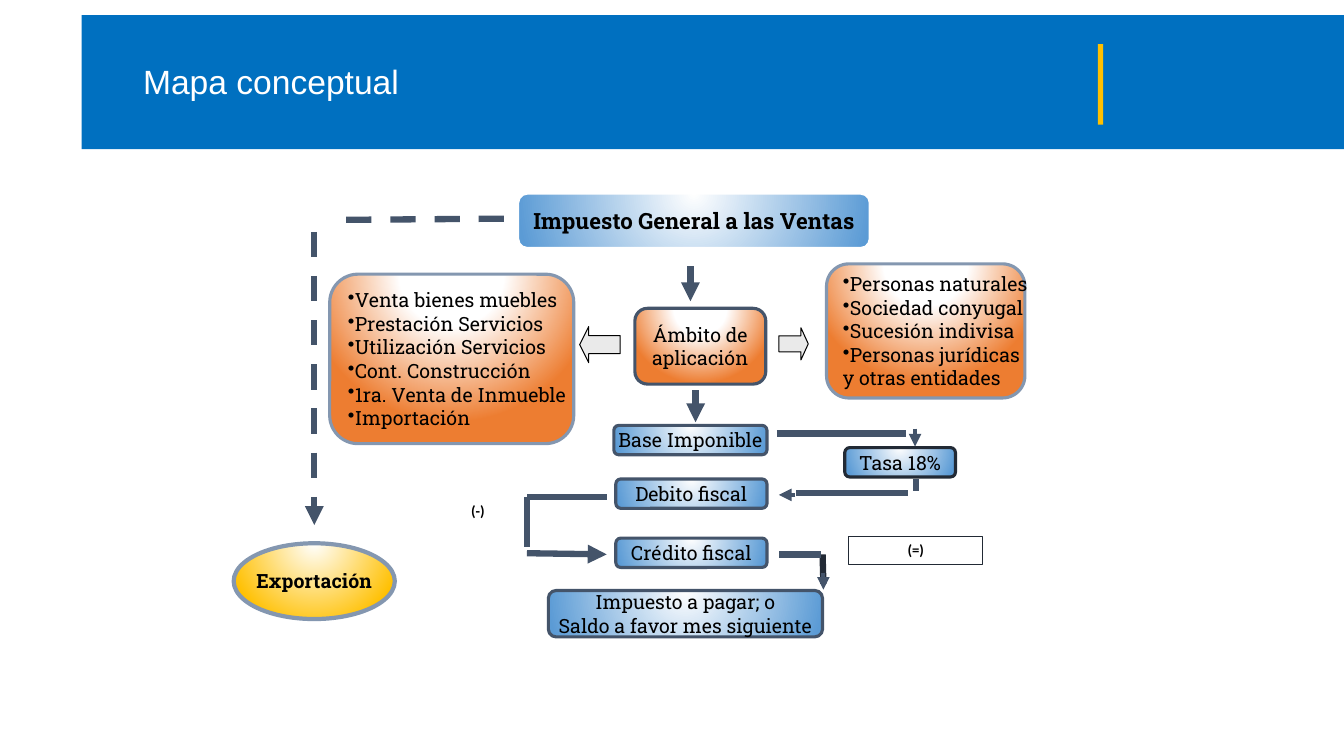
from lxml.etree import SubElement
from pptx import Presentation
from pptx.dml.color import RGBColor
from pptx.enum.dml import MSO_LINE
from pptx.enum.shapes import MSO_CONNECTOR, MSO_SHAPE
from pptx.enum.text import MSO_ANCHOR, MSO_AUTO_SIZE, PP_ALIGN
from pptx.oxml import parse_xml
from pptx.oxml.ns import nsdecls, qn
from pptx.util import Cm, Pt

COLORS = {
    "banner": "0070C0", "gold": "FFC000", "blue": "5B9BD5", "orange": "ED7D31",
    "slate": "44546A", "steel": "8497B0", "navy": "222A35",
    "gray": "EAEAEA", "white": "FFFFFF", "black": "000000",
}
BULLET = "•"


def color(name):
    return RGBColor.from_string(COLORS[name])


def write(frame, lines, font_name, size, font_color="black", bold=False, align=PP_ALIGN.CENTER):
    for index, line in enumerate(lines):
        paragraph = frame.paragraphs[0] if index == 0 else frame.add_paragraph()
        paragraph.alignment = align
        if line.startswith(BULLET):
            properties = paragraph._p.get_or_add_pPr()
            SubElement(properties, qn("a:buChar")).set("char", BULLET)
        run = paragraph.add_run()
        run.text = line.removeprefix(BULLET)
        run.font.name = font_name
        run.font.size = Pt(size)
        run.font.bold = bold
        run.font.color.rgb = color(font_color)


presentation = Presentation()
presentation.slide_width = Cm(33.87)
presentation.slide_height = Cm(19.05)
slide = presentation.slides.add_slide(presentation.slide_layouts[5])
shapes = slide.shapes

plain_shapes = [
    (MSO_SHAPE.RECTANGLE, (2.06, 0.38, 31.81, 3.38), "banner", None, 0),
    (MSO_SHAPE.RECTANGLE, (26.72, 2.06, 2.03, 0.13), "gold", None, 270),
    (MSO_SHAPE.LEFT_ARROW, (14.61, 8.23, 1.02, 0.91), "gray", "black", 0),
    (MSO_SHAPE.RIGHT_ARROW, (19.63, 8.26, 0.74, 0.81), "gray", "black", 0),
]
for kind, box, fill, outline, rotation in plain_shapes:
    shape = shapes.add_shape(kind, *map(Cm, box))
    shape.shadow.inherit = False
    shape.rotation = rotation
    shape.fill.solid()
    shape.fill.fore_color.rgb = color(fill)
    if outline:
        shape.adjustments[1] = 0.25
        shape.line.color.rgb = color(outline)
        shape.line.width = Pt(0.75)
    else:
        shape.line.fill.background()

title = shapes.title
title.left, title.top, title.width, title.height = map(Cm, (3.35, 0.91, 15.49, 2.41))
title.text_frame.auto_size = MSO_AUTO_SIZE.NONE
title.text_frame.vertical_anchor = MSO_ANCHOR.MIDDLE
write(title.text_frame, ["Mapa conceptual"], "Arial", 24, "white", align=PP_ALIGN.LEFT)
title.text_frame.paragraphs[0].line_spacing = 0.9
shape.element.addnext(title.element)

ROUNDED, OVAL = MSO_SHAPE.ROUNDED_RECTANGLE, MSO_SHAPE.OVAL
nodes = [
    (ROUNDED, (13.06, 4.88, 8.86, 1.37), "blue", "white", 1.5, ["Impuesto General a las Ventas"]),
    (ROUNDED, (16, 7.77, 3.3, 1.91), "orange", "slate", 2.25, ["Ámbito de", "aplicación"]),
    (ROUNDED, (13.82, 14.88, 6.91, 1.17), "blue", "slate", 2.25,
     ["Impuesto a pagar; o", "Saldo a favor mes siguiente"]),
    (ROUNDED, (15.52, 13.56, 3.81, 0.74), "blue", "slate", 2.25, ["Crédito fiscal"]),
    (ROUNDED, (8.31, 6.91, 6.15, 4.27), "orange", "steel", 2.25,
     ["•Venta bienes muebles", "•Prestación Servicios", "•Utilización Servicios",
      "•Cont. Construcción", "•1ra. Venta de Inmueble", "•Importación"]),
    (ROUNDED, (15.47, 10.72, 3.86, 0.74), "blue", "slate", 2.25, ["Base Imponible"]),
    (ROUNDED, (20.83, 6.65, 5, 3.38), "orange", "steel", 2.25,
     ["•Personas naturales", "•Sociedad conyugal", "•Sucesión indivisa",
      "•Personas jurídicas", "y otras entidades"]),
    (ROUNDED, (21.29, 11.28, 2.79, 0.74), "blue", "navy", 2.25, ["Tasa 18%"]),
    (ROUNDED, (15.52, 12.07, 3.81, 0.74), "blue", "slate", 2.25, ["Debito fiscal"]),
    (OVAL, (5.89, 13.69, 4.06, 1.91), "gold", "steel", 3, ["Exportación"]),
]
for kind, box, fill, outline, width, lines in nodes:
    shape = shapes.add_shape(kind, *map(Cm, box))
    shape.shadow.inherit = False
    shape.fill.background()
    white_until = 35000 if fill == "orange" else 0
    gradient = parse_xml(
        f'<a:gradFill {nsdecls("a")} rotWithShape="1"><a:gsLst>'
        f'<a:gs pos="0"><a:srgbClr val="{COLORS["white"]}"/></a:gs>'
        f'<a:gs pos="{white_until}"><a:srgbClr val="{COLORS["white"]}"/></a:gs>'
        f'<a:gs pos="100000"><a:srgbClr val="{COLORS[fill]}"/></a:gs></a:gsLst>'
        '<a:path path="circle"><a:fillToRect l="50000" t="-80000" r="50000" b="180000"/></a:path>'
        '</a:gradFill>')
    properties = shape.element.spPr
    properties.replace(properties.find(qn("a:noFill")), gradient)
    shape.line.color.rgb = color(outline)
    shape.line.width = Pt(width)
    frame = shape.text_frame
    frame.word_wrap = False
    frame.vertical_anchor = MSO_ANCHOR.MIDDLE
    if kind == OVAL:
        frame.margin_left = frame.margin_right = Cm(0.18)
        frame.margin_top = frame.margin_bottom = Cm(0.1)
    is_heading = outline == "white"
    align = PP_ALIGN.LEFT if lines[0].startswith(BULLET) else PP_ALIGN.CENTER
    write(frame, lines, "Roboto Slab", 16 if is_heading else 14,
          bold=is_heading or kind == OVAL, align=align)

links = [
    ((19.58, 10.92, 22.83, 10.92), "slate", 4.5, False, False),
    ((23.06, 10.8, 23.06, 11.25), "slate", 3, False, True),
    ((17.53, 9.83, 17.53, 10.64), "slate", 4.5, False, True),
    ((20.04, 12.47, 19.63, 12.47), "slate", 3, False, True),
    ((20.07, 12.42, 22.89, 12.42), "slate", 4.5, False, False),
    ((23.09, 12.37, 23.09, 12.07), "slate", 4.5, False, False),
    ((15.29, 12.52, 13.28, 12.52), "slate", 4.5, False, False),
    ((13.28, 12.52, 13.28, 13.79), "slate", 4.5, False, False),
    ((13.28, 13.94, 15.29, 13.97), "slate", 4.5, False, True),
    ((20.73, 13.97, 20.75, 14.71), "navy", 4.5, False, False),
    ((20.75, 14.43, 20.75, 14.86), "slate", 3, False, True),
    ((20.68, 13.97, 19.63, 13.97), "slate", 4.5, False, False),
    ((17.4, 6.71, 17.4, 7.59), "slate", 4.5, False, True),
    ((12.7, 5.51, 8.61, 5.54), "slate", 4.5, True, False),
    ((7.92, 5.84, 7.92, 13.23), "slate", 4.5, True, True),
]
for ends, line_color, width, dashed, arrow in links:
    link = shapes.add_connector(MSO_CONNECTOR.STRAIGHT, *map(Cm, ends))
    link.line.color.rgb = color(line_color)
    link.line.width = Pt(width)
    if dashed:
        link.line.dash_style = MSO_LINE.DASH
    properties = link.element.spPr
    if arrow:
        SubElement(properties.find(qn("a:ln")), qn("a:tailEnd")).set("type", "triangle")
    SubElement(properties, qn("a:effectLst"))

signs = [
    ("(-)", (11.23, 12.52, 1.63, 0.71), None),
    ("(=)", (21.39, 13.51, 3.38, 0.71), "navy"),
]
for sign, box, outline in signs:
    label = shapes.add_textbox(*map(Cm, box))
    label.text_frame.word_wrap = True
    label.text_frame.auto_size = MSO_AUTO_SIZE.SHAPE_TO_FIT_TEXT
    if outline:
        label.line.color.rgb = color(outline)
        label.line.width = Pt(0.75)
    write(label.text_frame, [sign], "Calibri", 10.5, bold=True)

presentation.save("out.pptx")
